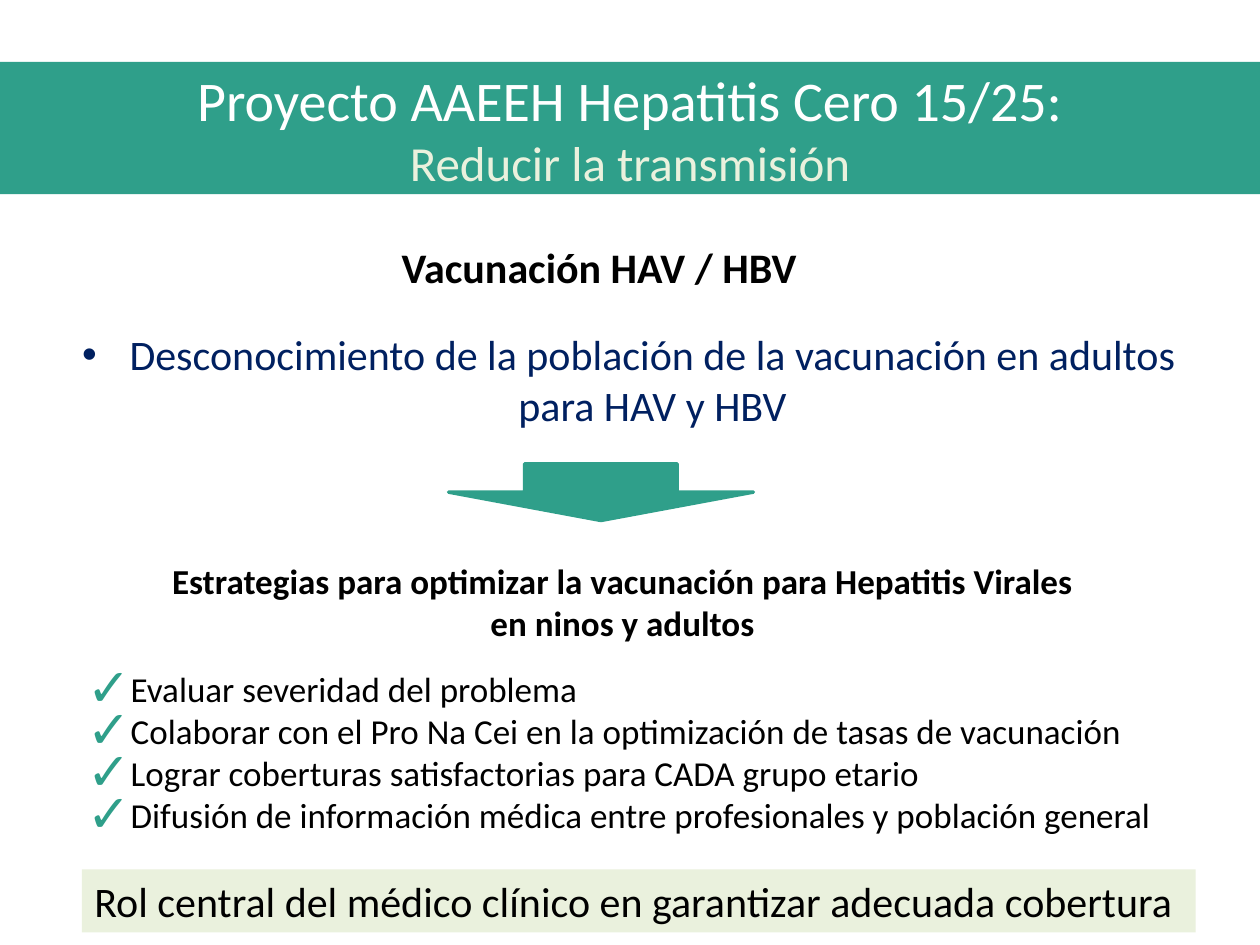
from lxml import etree
from pptx import Presentation
from pptx.dml.color import RGBColor
from pptx.enum import shapes, text
from pptx.oxml.ns import qn
from pptx.util import Pt

GREEN, PALE, NAVY, BLACK, WHITE = "2F9F8A", "EAF1DD", "002060", "000000", "FFFFFF"
CENTER, LEFT = text.PP_ALIGN.CENTER, text.PP_ALIGN.LEFT
TOP, MIDDLE = text.MSO_ANCHOR.TOP, text.MSO_ANCHOR.MIDDLE


def rgb(value):
    return RGBColor.from_string(value)


def set_attrs(obj, values):
    for name, value in values.items():
        setattr(obj, name, value)


def add_bullet(p, char, color, indent, size=100):
    pPr = p._p.get_or_add_pPr()
    pPr.set("marL", str(Pt(indent)))
    pPr.set("indent", str(-Pt(indent)))
    clr = etree.SubElement(pPr, qn("a:buClr"))
    etree.SubElement(clr, qn("a:srgbClr"), val=color)
    etree.SubElement(pPr, qn("a:buSzPct"), val=str(size * 1000))
    etree.SubElement(pPr, qn("a:buFont"), typeface="Arial")
    etree.SubElement(pPr, qn("a:buChar"), char=char)


def write(sp, lines, align=LEFT, anchor=TOP, bullet=None):
    tf = sp.text_frame
    set_attrs(tf, {"word_wrap": True, "vertical_anchor": anchor})
    for i, (words, size, color, bold) in enumerate(lines):
        p = tf.paragraphs[0] if i == 0 else tf.add_paragraph()
        p.alignment = align
        if bullet:
            add_bullet(p, **bullet)
        r = p.add_run()
        r.text = words
        set_attrs(r.font, {"name": "Calibri", "size": Pt(size), "bold": bold})
        r.font.color.rgb = rgb(color)


def add_block(s, kind, box, fill):
    sp = s.shapes.add_shape(kind, *map(Pt, box))
    sp.shadow.inherit = False
    sp.fill.solid()
    sp.fill.fore_color.rgb = rgb(fill)
    sp.line.fill.background()
    return sp


def add_banner(s, box, lines, fill, **layout):
    write(add_block(s, shapes.MSO_SHAPE.RECTANGLE, box, fill), lines, **layout)


def add_text(s, box, lines, **layout):
    write(s.shapes.add_textbox(*map(Pt, box)), lines, **layout)


def add_arrow(s, box):
    sp = add_block(s, shapes.MSO_SHAPE.DOWN_ARROW, box, GREEN)
    sp.line.color.rgb = rgb(GREEN)
    sp.line.width = Pt(2)


def main():
    prs = Presentation()
    set_attrs(prs, {"slide_width": Pt(720), "slide_height": Pt(540)})
    s = prs.slides.add_slide(prs.slide_layouts[6])

    add_banner(s, (0, 35.4, 720, 75.6), [
        ("Proyecto AAEEH Hepatitis Cero 15/25:", 32, WHITE, False),
        ("Reducir la transmisión", 28, PALE, False),
    ], GREEN, align=CENTER, anchor=MIDDLE)
    add_text(s, (35.4, 184.4, 648, 132.5), [
        ("Desconocimiento de la población de la vacunación en adultos para HAV y HBV",
         24, NAVY, False),
    ], align=CENTER, bullet={"char": "•", "color": NAVY, "indent": 27})
    add_text(s, (222.5, 134.6, 242.6, 36), [("Vacunación HAV / HBV", 24, BLACK, True)])

    strategies = [
        "Evaluar severidad del problema",
        "Colaborar con el Pro Na Cei en la optimización de tasas de vacunación",
        "Lograr coberturas satisfactorias para CADA grupo etario",
        "Difusión de información médica entre profesionales y población general",
    ]
    add_text(s, (42.5, 378, 635, 104.4),
             [(words, 20, BLACK, False) for words in strategies],
             bullet={"char": "✓", "color": GREEN, "indent": 22.5, "size": 150})
    add_arrow(s, (256.3, 265, 174.2, 32.4))

    heading = ["Estrategias para optimizar la vacunación para Hepatitis Virales",
               "en ninos y adultos"]
    add_text(s, (86.4, 316.1, 538.6, 55.4),
             [(words, 20, BLACK, True) for words in heading], align=CENTER)
    add_banner(s, (46.8, 496.8, 636.5, 36), [
        ("Rol central del médico clínico en garantizar adecuada cobertura", 24, BLACK, False),
    ], PALE)
    prs.save("out.pptx")


if __name__ == "__main__":
    main()
